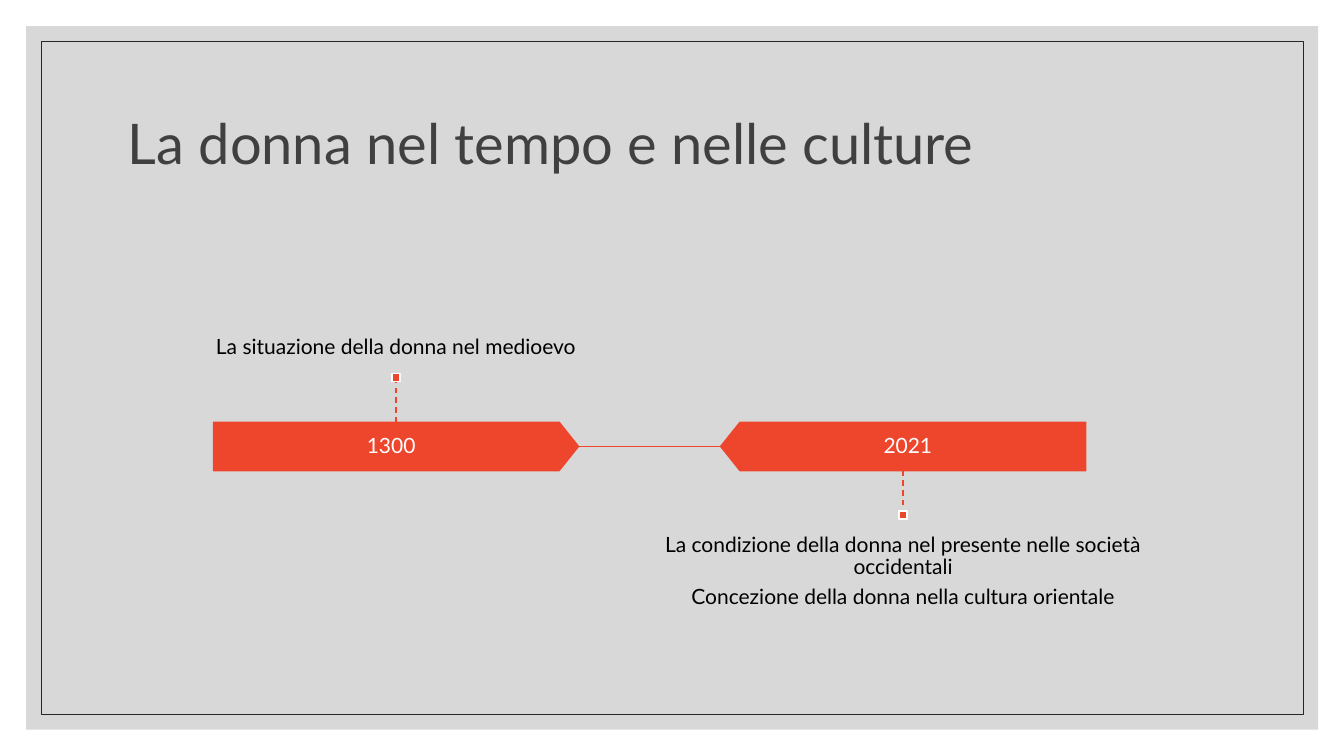
from lxml import etree
from pptx import Presentation
from pptx.dml.color import RGBColor
from pptx.enum import dml, shapes, text
from pptx.oxml.ns import qn
from pptx.util import Cm, Pt

FONT = "Lato"
RED, WHITE, BLACK = "EE462D", "FFFFFF", "000000"
BAR_W, BAR_H = 9.2, 1.22
STEM, MARKER = 1.02, 0.2
NOTE_W, NOTE_H = 12.78, 3.25


def rgb(value):
    return RGBColor.from_string(value)


def add_box(s, kind, x, y, w, h, fill=None, line=None, width=1):
    sp = s.shapes.add_shape(kind, Cm(x), Cm(y), Cm(w), Cm(h))
    sp.shadow.inherit = False
    if fill:
        sp.fill.solid()
        sp.fill.fore_color.rgb = rgb(fill)
    else:
        sp.fill.background()
    if line:
        sp.line.color.rgb = rgb(line)
        sp.line.width = Pt(width)
    else:
        sp.line.fill.background()
    return sp


def add_line(s, x1, y1, x2, y2, dashed=False):
    cx = s.shapes.add_connector(shapes.MSO_CONNECTOR.STRAIGHT,
                                Cm(x1), Cm(y1), Cm(x2), Cm(y2))
    cx.line.color.rgb = rgb(RED)
    cx.line.width = Pt(1)
    if dashed:
        cx.line.dash_style = dml.MSO_LINE.DASH
    etree.SubElement(cx._element.spPr, qn("a:effectLst"))


def format_text(tf, size, color, align, anchor):
    tf.word_wrap = True
    tf.auto_size = text.MSO_AUTO_SIZE.NONE
    tf.vertical_anchor = anchor
    for p in tf.paragraphs:
        p.alignment = align
        p.line_spacing = 0.9
        for r in p.runs:
            r.font.name = FONT
            r.font.size = Pt(size)
            r.font.color.rgb = rgb(color)


def add_text(s, lines, x, y, w, h, color, anchor, inset_x, inset_y):
    tf = s.shapes.add_textbox(Cm(x), Cm(y), Cm(w), Cm(h)).text_frame
    tf.text = "\n".join(lines)
    tf.margin_left = tf.margin_right = Cm(inset_x)
    tf.margin_top = tf.margin_bottom = Cm(inset_y)
    format_text(tf, 15, color, text.PP_ALIGN.CENTER, anchor)
    for p in tf.paragraphs:
        p.space_after = Pt(5.25)


def add_frame(s, x, y, w, h):
    """Translucent grey panel with a thin border set inside it."""
    rect = shapes.MSO_SHAPE.RECTANGLE
    panel = add_box(s, rect, x, y, w, h, fill="BFBFBF")
    color = panel._element.spPr.find(qn("a:solidFill"))[0]
    etree.SubElement(color, qn("a:alpha"), val="60000")
    gap = 0.38
    add_box(s, rect, x + gap, y + gap, w - 2 * gap, h - 2 * gap,
            line="262626", width=0.5)


def set_title(s, words, x, y, w, h):
    title = s.shapes.title
    s.shapes._spTree.append(title._element)  # in front of the panel
    title.left, title.top, title.width, title.height = Cm(x), Cm(y), Cm(w), Cm(h)
    title.text_frame.text = words
    format_text(title.text_frame, 40, "404040",
                text.PP_ALIGN.LEFT, text.MSO_ANCHOR.MIDDLE)


def add_period(s, x, y, year, notes, above):
    """Year bar at x, y with its notes above it, or below it pointing left."""
    bar = add_box(s, shapes.MSO_SHAPE.PENTAGON, x, y, BAR_W, BAR_H, RED, RED)
    bar.adjustments[0] = 0.4
    bar.rotation = 0 if above else 180
    tip = 0.24
    add_text(s, [year], x if above else x + tip, y, BAR_W - tip, BAR_H,
             WHITE, text.MSO_ANCHOR.MIDDLE, 0.3, 0.3)

    middle = x + BAR_W / 2
    if above:
        start, end = y, y - STEM
        marker_y = end - MARKER
        note_y, anchor = marker_y - NOTE_H, text.MSO_ANCHOR.BOTTOM
    else:
        start, end = y + BAR_H, y + BAR_H + STEM
        marker_y = end
        note_y, anchor = end + MARKER, text.MSO_ANCHOR.TOP
    add_line(s, middle, start, middle, end, dashed=True)
    add_box(s, shapes.MSO_SHAPE.RECTANGLE, middle - MARKER / 2, marker_y,
            MARKER, MARKER, RED, WHITE)
    add_text(s, notes, middle - NOTE_W / 2, note_y, NOTE_W, NOTE_H,
             BLACK, anchor, 0, 0.38)


def add_timeline(s, x, y, w):
    last_x = x + w - BAR_W
    middle_y = y + BAR_H / 2
    add_line(s, x + BAR_W, middle_y, last_x, middle_y)
    add_period(s, x, y, "1300", ["La situazione della donna nel medioevo"], True)
    add_period(s, last_x, y, "2021", [
        "La condizione della donna nel presente nelle società occidentali",
        "Concezione della donna nella cultura orientale"], False)


def main():
    prs = Presentation()
    prs.slide_width, prs.slide_height = Cm(33.87), Cm(19.05)
    s = prs.slides.add_slide(prs.slide_layouts[5])
    add_frame(s, 0.66, 0.66, 32.56, 17.73)
    set_title(s, "La donna nel tempo e nelle culture", 2.97, 1.78, 27.94, 3.81)
    add_timeline(s, 5.38, 10.64, 21.98)
    prs.save("out.pptx")


if __name__ == "__main__":
    main()
